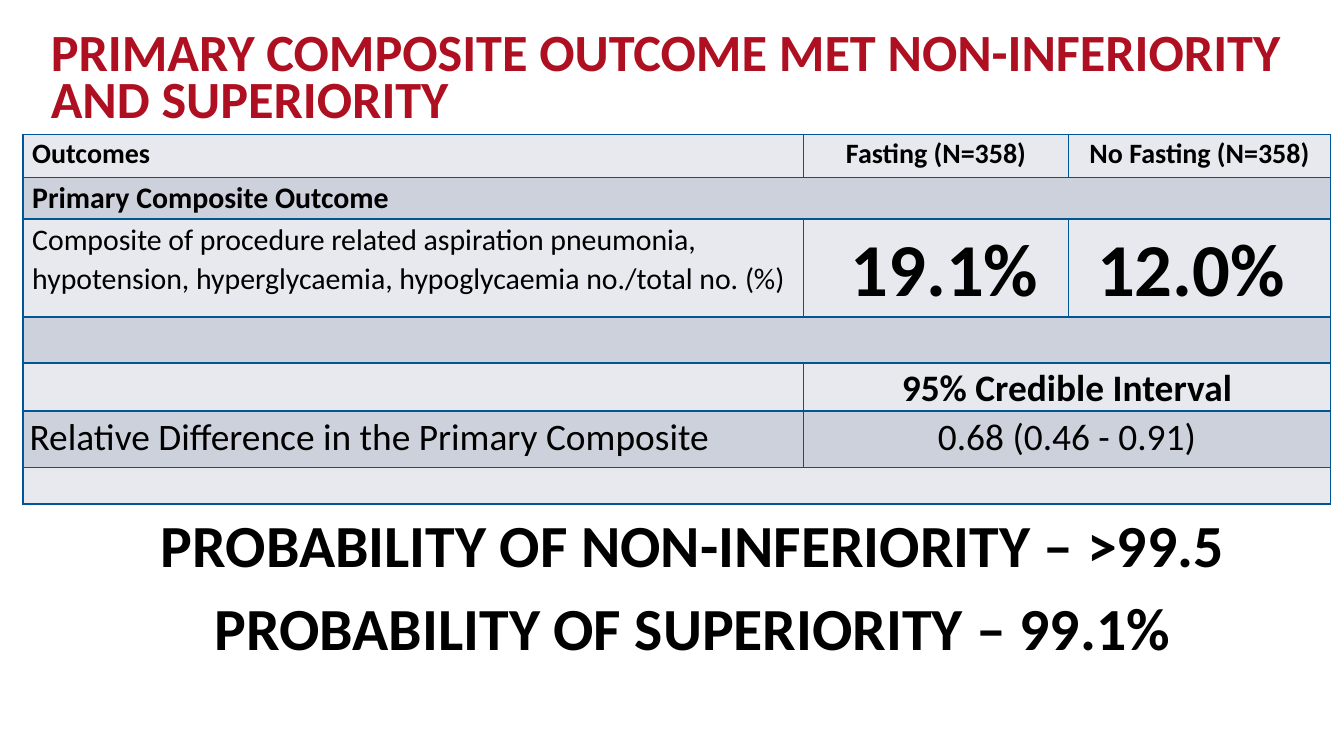
"""Build the primary composite outcome slide with its results table and probabilities."""
from dataclasses import dataclass

from lxml import etree
from pptx import Presentation
from pptx import util as u
from pptx.dml.color import RGBColor
from pptx.enum import text
from pptx.oxml import ns

ALIGN = text.PP_ALIGN


@dataclass(frozen=True)
class Theme:
    font: str = "Calibri"
    heading: str = "AE1022"
    ink: str = "000000"
    border: str = "005694"
    bands: tuple[str, str] = ("E7E9EE", "CCD1DC")
    title: int = 28
    header: int = 15
    body: int = 16
    interval: int = 20
    probability: int = 32
    rate: int = 40
    empty: int = 12


@dataclass(frozen=True)
class Box:
    left: float
    top: float
    width: float
    height: float


@dataclass(frozen=True)
class Entry:
    row: int
    column: int
    wording: str
    size: int
    bold: bool = True
    align: ALIGN = ALIGN.CENTER
    inset: float = 0.07


THEME = Theme()
SLIDE_WIDTH = 10
SLIDE_HEIGHT = SLIDE_WIDTH * 9 / 16
TITLE_BOX = Box(0.028, 0.038, 0.951, 0.084)
TABLE_BOX = Box(0.017, 0.178, 0.973, 0.489)
PROBABILITY_BOX = Box(0.013, 0.663, 1.001, 0.23)
COLUMNS = (5.81, 1.97, 1.95)
ROWS = (0.32, 0.31, 0.73, 0.34, 0.36, 0.42, 0.27)
MERGES = {1: 0, 3: 0, 4: 1, 5: 1, 6: 0}

ENTRIES = (
    Entry(0, 0, "Outcomes", THEME.header, align=ALIGN.JUSTIFY),
    Entry(0, 1, "Fasting (N=358)", THEME.header),
    Entry(0, 2, "No Fasting (N=358)", THEME.header),
    Entry(1, 0, "Primary Composite Outcome", THEME.body, align=ALIGN.JUSTIFY),
    Entry(2, 0, "Composite of procedure related aspiration pneumonia, hypotension, "
          "hyperglycaemia, hypoglycaemia no./total no. (%)", THEME.body, False, ALIGN.LEFT),
    Entry(2, 1, " 19.1%", THEME.rate),
    Entry(2, 2, "12.0% ", THEME.rate),
    Entry(4, 1, "95% Credible Interval", THEME.interval),
    Entry(5, 0, "Relative Difference in the Primary Composite",
          THEME.interval, False, ALIGN.LEFT, 0.05),
    Entry(5, 1, "0.68 (0.46 - 0.91)", THEME.interval, False, inset=0.05),
)
PROBABILITIES = (
    "PROBABILITY OF NON-INFERIORITY – >99.5",
    "PROBABILITY OF SUPERIORITY – 99.1%",
)


def apply(target, values: dict) -> None:
    """Set each named attribute of the target."""
    for name, value in values.items():
        setattr(target, name, value)


def place(box: Box) -> tuple[int, ...]:
    """Turn shares of the slide into lengths."""
    return (u.Inches(box.left * SLIDE_WIDTH), u.Inches(box.top * SLIDE_HEIGHT),
            u.Inches(box.width * SLIDE_WIDTH), u.Inches(box.height * SLIDE_HEIGHT))


def write(paragraph, wording: str, size: int, bold: bool, color: str, layout: dict) -> None:
    """Write one styled run and lay out its paragraph."""
    apply(paragraph, layout)
    run = paragraph.add_run()
    run.text = wording
    apply(run.font, {"name": THEME.font, "size": u.Pt(size), "bold": bold})
    run.font.color.rgb = RGBColor.from_string(color)


def add_lines(slide, box: Box, lines: tuple[str, ...], size: int, color: str,
              layout: dict, gap: float = 0, inset: float = 0.1) -> None:
    """Add a wrapping text box with one paragraph per line."""
    frame = slide.shapes.add_textbox(*place(box)).text_frame
    apply(frame, {"word_wrap": True, "margin_left": u.Inches(inset)})
    for index, line in enumerate(lines):
        paragraph = frame.paragraphs[0] if index == 0 else frame.add_paragraph()
        spacing = {"space_before": u.Pt(gap)} if index else {}
        write(paragraph, line, size, True, color, layout | spacing)


def style_cell(cell, fill: str) -> None:
    """Give a cell its fill, borders and a small empty line height."""
    cell.fill.solid()
    cell.fill.fore_color.rgb = RGBColor.from_string(fill)
    apply(cell, {"margin_top": 0, "margin_bottom": 0})
    properties = cell._tc.get_or_add_tcPr()
    for index, side in enumerate(("lnL", "lnR", "lnT", "lnB")):
        line = etree.Element(ns.qn(f"a:{side}"), w=str(u.Pt(1)))
        paint = etree.SubElement(line, ns.qn("a:solidFill"))
        etree.SubElement(paint, ns.qn("a:srgbClr"), val=THEME.border)
        properties.insert(index, line)
    ending = cell.text_frame.paragraphs[0]._p
    etree.SubElement(ending, ns.qn("a:endParaRPr"), sz=str(THEME.empty * 100))


def add_outcomes(slide) -> None:
    """Add the outcomes table."""
    outcomes = slide.shapes.add_table(len(ROWS), len(COLUMNS), *place(TABLE_BOX)).table
    for column, width in zip(outcomes.columns, COLUMNS):
        column.width = u.Inches(width)
    for index, (row, height) in enumerate(zip(outcomes.rows, ROWS)):
        row.height = u.Inches(height)
        for cell in row.cells:
            style_cell(cell, THEME.bands[index % 2])
    for row, first in MERGES.items():
        outcomes.cell(row, first).merge(outcomes.cell(row, len(COLUMNS) - 1))
    for entry in ENTRIES:
        cell = outcomes.cell(entry.row, entry.column)
        inset = u.Inches(entry.inset)
        apply(cell, {"margin_left": inset, "margin_right": inset})
        write(cell.text_frame.paragraphs[0], entry.wording, entry.size, entry.bold, THEME.ink,
              {"alignment": entry.align, "line_spacing": 1.07, "space_after": u.Pt(8)})


def main() -> None:
    """Build and save the slide."""
    deck = Presentation()
    apply(deck, {"slide_width": u.Inches(SLIDE_WIDTH), "slide_height": u.Inches(SLIDE_HEIGHT)})
    slide = deck.slides.add_slide(deck.slide_layouts[6])
    add_lines(slide, TITLE_BOX,
              ("PRIMARY COMPOSITE OUTCOME MET NON-INFERIORITY AND SUPERIORITY",),
              THEME.title, THEME.heading, {"line_spacing": u.Pt(25)})
    add_outcomes(slide)
    add_lines(slide, PROBABILITY_BOX, PROBABILITIES, THEME.probability, THEME.ink,
              {"alignment": ALIGN.CENTER}, gap=6, inset=0.14)
    deck.save("out.pptx")


if __name__ == "__main__":
    main()
